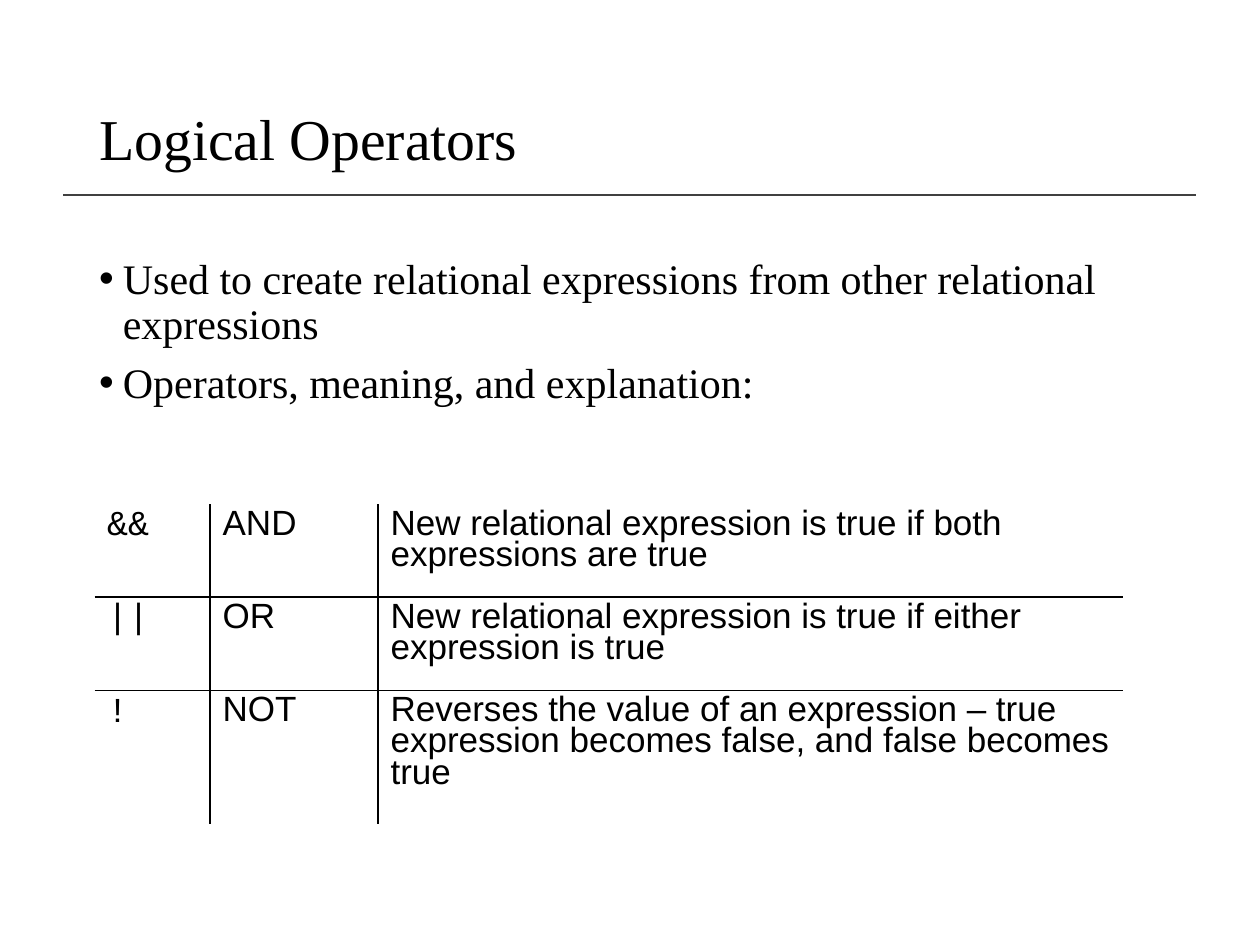
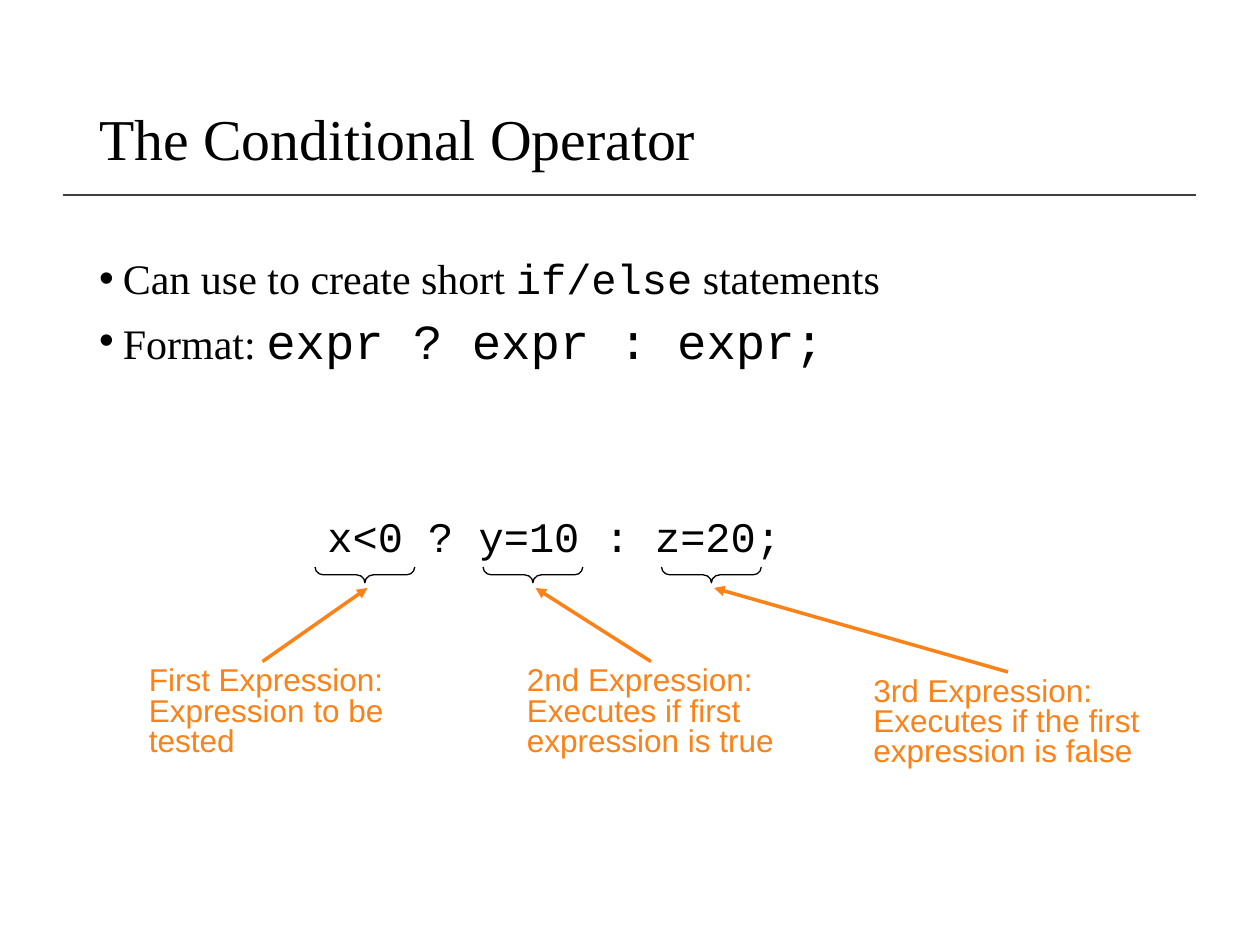
from lxml.etree import SubElement
from pptx import Presentation
from pptx.dml.color import RGBColor
from pptx.enum.shapes import MSO_CONNECTOR, MSO_SHAPE
from pptx.enum.text import MSO_ANCHOR, MSO_AUTO_SIZE as AUTO, PP_ALIGN
from pptx.oxml.ns import qn
from pptx.util import Pt

COLORS = {"text": "000000", "rule": "404040", "accent": "FA8218"}
SERIF, SANS, MONO = "Times New Roman", "Arial", "Courier New"


def add_run(paragraph, text, size, font, color="text"):
    run = paragraph.add_run()
    run.text = text
    run.font.size = Pt(size)
    run.font.name = font
    run.font.color.rgb = RGBColor.from_string(COLORS[color])


def add_line(slide, start, end, color, width, arrow=False):
    line = slide.shapes.add_connector(
        MSO_CONNECTOR.STRAIGHT, *(Pt(length) for length in start + end))
    line.line.color.rgb = RGBColor.from_string(COLORS[color])
    line.line.width = Pt(width)
    if arrow:
        SubElement(line.line._get_or_add_ln(), qn("a:tailEnd"), type="triangle")
    SubElement(line._element.spPr, qn("a:effectLst"))


prs = Presentation()
prs.slide_width, prs.slide_height = Pt(720), Pt(540)

# Titles and bullet lists; each bullet is a list of (text, size, font)
outline = [
    ("Logical Operators", [
        [("Used to create relational expressions from other relational expressions", 24, SERIF)],
        [("Operators, meaning, and explanation:", 24, SERIF)],
    ]),
    ("The Conditional Operator", [
        [("Can use to create short ", 24, SERIF), ("if/else", 24, MONO),
         (" statements", 24, SERIF)],
        [("Format: ", 24, SERIF), ("expr ? expr : expr;", 28, MONO)],
    ]),
]
for heading, bullets in outline:
    slide = prs.slides.add_slide(prs.slide_layouts[1])
    add_line(slide, (36, 111.6), (683.5, 111.6), "rule", 1)

    title, body = slide.placeholders
    for placeholder, top, height in ((title, 28.75, 104.5), (body, 144, 342.75)):
        placeholder.left, placeholder.top = Pt(49.5), Pt(top)
        placeholder.width, placeholder.height = Pt(621), Pt(height)
        placeholder.text_frame.auto_size = AUTO.NONE
    title.text_frame.vertical_anchor = MSO_ANCHOR.MIDDLE
    title_line = title.text_frame.paragraphs[0]
    title_line.alignment = PP_ALIGN.LEFT
    title_line.line_spacing = 0.9
    add_run(title_line, heading, 33, SERIF)

    for index, pieces in enumerate(bullets):
        frame = body.text_frame
        bullet = frame.add_paragraph() if index else frame.paragraphs[0]
        bullet.line_spacing = 0.9
        bullet.space_before = Pt(7.5)
        bullet_format = bullet._p.get_or_add_pPr()
        bullet_format.set("marL", str(Pt(13.5)))
        bullet_format.set("indent", str(-Pt(13.5)))
        for piece in pieces:
            add_run(bullet, *piece)

logical, conditional = prs.slides

# Logical Operators: table with inner borders only
operators = [
    ("&&", "AND", "New relational expression is true if both expressions are true"),
    ("||", "OR", "New relational expression is true if either expression is true"),
    ("!", "NOT", "Reverses the value of an expression – true expression becomes false, "
                 "and false becomes true"),
]
column_widths = [66, 96, 426]
row_heights = [53.25, 53.25, 76.5]
table = logical.shapes.add_table(
    3, 3, Pt(54), Pt(288), Pt(sum(column_widths)), Pt(sum(row_heights))).table
table.first_row = table.horz_banding = False
for column, width in zip(table.columns, column_widths):
    column.width = Pt(width)
for row, height in zip(table.rows, row_heights):
    row.height = Pt(height)

for row, operator in enumerate(operators):
    for col, text in enumerate(operator):
        cell = table.cell(row, col)
        inner_edges = {"lnL": col > 0, "lnR": col < 2, "lnT": row > 0, "lnB": row < 2}
        cell_format = cell._tc.get_or_add_tcPr()
        for edge, inner in inner_edges.items():
            border = SubElement(cell_format, qn(f"a:{edge}"), w=str(Pt(1)))
            if inner:
                fill = SubElement(border, qn("a:solidFill"))
                SubElement(fill, qn("a:srgbClr"), val=COLORS["text"])
            else:
                SubElement(border, qn("a:noFill"))
        cell.fill.background()
        paragraph = cell.text_frame.paragraphs[0]
        paragraph.line_spacing = 0.8
        add_run(paragraph, text, 20, SANS if col else MONO)

# The Conditional Operator: example with a brace, arrow and caption per expression
# Brace left, arrow start, caption left, top and width, caption lines
expressions = [
    (204, 150, 78, 378, 150, ["First Expression:", "Expression to be", "tested"]),
    (300, 372, 294, 378, 157, ["2nd Expression:", "Executes if first", "expression is true"]),
    (402, 576, 492, 384, 168, ["3rd Expression:", "Executes if the first",
                               "expression is false"]),
]
labels = [(180, 288, 274, 36, ["x<0 ? y=10 : z=20;"], 24, MONO, "text", 1)]
for brace_left, arrow_x, left, top, width, lines in expressions:
    brace = conditional.shapes.add_shape(
        MSO_SHAPE.RIGHT_BRACE, Pt(brace_left), Pt(300), Pt(9), Pt(57))
    brace.rotation = 90
    brace.adjustments[0], brace.adjustments[1] = 0.53, 0.5
    brace.shadow.inherit = False
    brace.fill.background()
    brace.line.color.rgb = RGBColor.from_string(COLORS["text"])
    brace.line.width = Pt(0.75)
    add_line(conditional, (arrow_x, top), (brace_left + 6, 336), "accent", 2, arrow=True)
    labels.append((left, top, width, 60, lines, 18, SANS, "accent", 0.8))

for left, top, width, height, lines, size, font, color, spacing in labels:
    frame = conditional.shapes.add_textbox(Pt(left), Pt(top), Pt(width), Pt(height)).text_frame
    frame.word_wrap = False
    frame.auto_size = AUTO.SHAPE_TO_FIT_TEXT
    for index, text in enumerate(lines):
        paragraph = frame.add_paragraph() if index else frame.paragraphs[0]
        paragraph.line_spacing = spacing
        add_run(paragraph, text, size, font, color)

prs.save("out.pptx")
